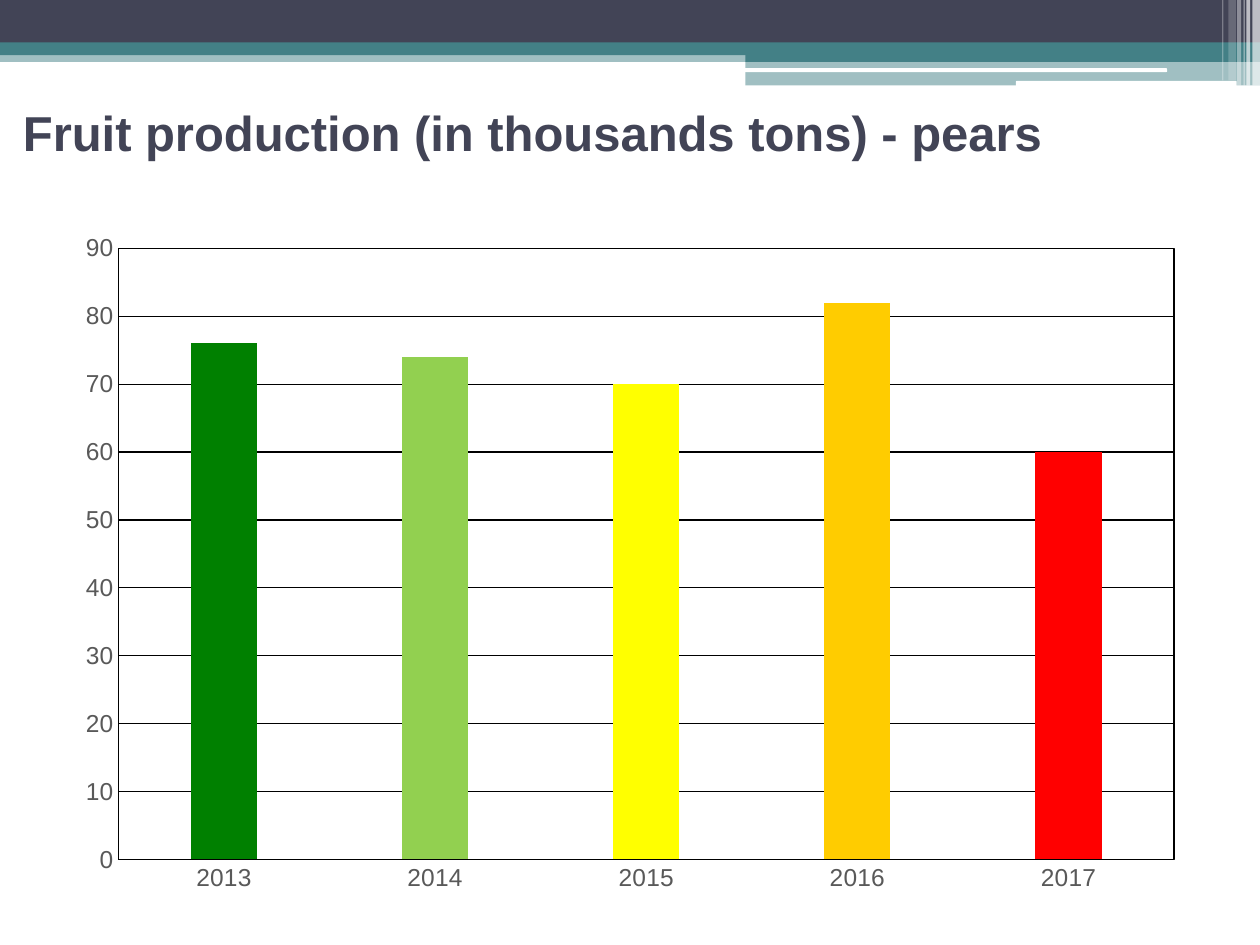
from lxml.etree import SubElement
from pptx import Presentation
from pptx.chart.data import CategoryChartData
from pptx.dml.color import RGBColor
from pptx.enum.chart import XL_CHART_TYPE, XL_TICK_MARK
from pptx.enum.shapes import MSO_SHAPE
from pptx.enum.text import MSO_ANCHOR
from pptx.oxml import parse_xml
from pptx.oxml.ns import nsdecls, qn
from pptx.util import Pt

TITLE = "Fruit production (in thousands tons) - pears"
PRODUCTION = [
    ("2013", 76, "008000"),
    ("2014", 74, "92D050"),
    ("2015", 70, "FFFF00"),
    ("2016", 82, "FFCC00"),
    ("2017", 60, "FF0000"),
]
NAVY, TEAL, WHITE, BLACK, GRAY = "424456", "438086", "FFFFFF", "000000", "595959"
BANDS = [
    (0, 28.8, 720, 6.6, TEAL, 50),
    (0, 0, 720, 24.5, NAVY, 100),
    (0, 24.3, 720, 7.2, TEAL, 100),
    (426, 28, 294, 7.4, TEAL, 100),
    (426, 35.2, 294, 13.6, TEAL, 50),
]
ROUNDED_BARS = [(425.5, 39, 241.4, 2.2), (580.5, 46.3, 126.2, 3)]
STRIPES = [
    (715.7, 4.3, 49, 65),
    (712.2, 2.2, 49, 65),
    (710.6, 0.7, 49, 60),
    (707, 2.2, 49, 40),
    (702, 4.3, 46, 20),
    (698.4, 0.7, 46, 30),
]
CHART_BOX = (36, 126, 648, 391.7)
PLOT_BOX = (67.7, 142, 603.3, 349.2)


def color(value):
    return RGBColor.from_string(value)


def add_block(slide, left, top, width, height, fill, opacity=100, kind=MSO_SHAPE.RECTANGLE):
    shape = slide.shapes.add_shape(kind, Pt(left), Pt(top), Pt(width), Pt(height))
    shape.shadow.inherit = False
    shape.fill.solid()
    shape.fill.fore_color.rgb = color(fill)
    shape.line.fill.background()
    if opacity < 100:
        fill_color = shape.fill._xPr.find(qn("a:solidFill"))[0]
        SubElement(fill_color, qn("a:alpha"), val=str(opacity * 1000))


def add_text(slide, text, left, top, width, height, size, font_color, bold=False, name="Arial"):
    box = slide.shapes.add_textbox(Pt(left), Pt(top), Pt(width), Pt(height))
    frame = box.text_frame
    frame.word_wrap = True
    frame.vertical_anchor = MSO_ANCHOR.MIDDLE
    paragraph = frame.paragraphs[0]
    paragraph.text = text
    style_font(paragraph.font, size, font_color, bold, name)


def style_font(font, size, font_color, bold=False, name="Arial"):
    font.size = Pt(size)
    font.name = name
    font.bold = bold
    font.color.rgb = color(font_color)


def style_line(line):
    line.color.rgb = color(BLACK)
    line.width = Pt(0.75)


def format_plot_area(chart):
    plot_area = chart._chartSpace.chart.plotArea
    for layout in plot_area.findall(qn("c:layout")):
        plot_area.remove(layout)
    chart_left, chart_top, chart_width, chart_height = CHART_BOX
    left, top, width, height = PLOT_BOX
    fractions = {
        "x": (left - chart_left) / chart_width,
        "y": (top - chart_top) / chart_height,
        "w": width / chart_width,
        "h": height / chart_height,
    }
    sizes = "".join(f'<c:{key} val="{value}"/>' for key, value in fractions.items())
    plot_area.insert(0, parse_xml(
        f'<c:layout {nsdecls("c")}><c:manualLayout><c:layoutTarget val="inner"/>'
        f'<c:xMode val="edge"/><c:yMode val="edge"/>{sizes}</c:manualLayout></c:layout>'))
    plot_area.append(parse_xml(
        f'<c:spPr {nsdecls("c", "a")}><a:noFill/><a:ln w="9525"><a:solidFill>'
        f'<a:srgbClr val="{BLACK}"/></a:solidFill></a:ln></c:spPr>'))


def add_production_chart(slide):
    years, tons, fills = zip(*PRODUCTION)
    data = CategoryChartData()
    data.categories = years
    data.add_series("Series 1", tons)
    chart = slide.shapes.add_chart(
        XL_CHART_TYPE.COLUMN_CLUSTERED, *map(Pt, CHART_BOX), data).chart
    chart.has_legend = False
    chart.has_title = False
    style_font(chart.font, 10, BLACK, name="Cambria")

    plot = chart.plots[0]
    plot.gap_width = 219
    plot.overlap = -27
    plot.vary_by_categories = False
    series = plot.series[0]
    series.format.fill.solid()
    series.format.fill.fore_color.rgb = color("53548A")
    for index, fill in enumerate(fills):
        point_fill = series.points[index].format.fill
        point_fill.solid()
        point_fill.fore_color.rgb = color(fill)

    for axis in (chart.category_axis, chart.value_axis):
        axis.major_tick_mark = XL_TICK_MARK.NONE
        axis.minor_tick_mark = XL_TICK_MARK.NONE
        style_font(axis.tick_labels.font, 14, GRAY)
    style_line(chart.category_axis.format.line)
    value_axis = chart.value_axis
    value_axis.format.line.fill.background()
    value_axis.minimum_scale = 0
    value_axis.maximum_scale = 90
    value_axis.major_unit = 10
    value_axis.has_major_gridlines = True
    style_line(value_axis.major_gridlines.format.line)
    format_plot_area(chart)


def main():
    presentation = Presentation()
    presentation.slide_width, presentation.slide_height = Pt(720), Pt(540)
    slide = presentation.slides.add_slide(presentation.slide_layouts[6])
    for band in BANDS:
        add_block(slide, *band)
    for bar in ROUNDED_BARS:
        add_block(slide, *bar, WHITE, kind=MSO_SHAPE.ROUNDED_RECTANGLE)
    for left, width, height, opacity in STRIPES:
        add_block(slide, left, 0, width, height, WHITE, opacity)
    add_text(slide, TITLE, 6, 48.2, 702, 54, size=28, font_color=NAVY, bold=True)
    add_production_chart(slide)
    presentation.save("out.pptx")


if __name__ == "__main__":
    main()
